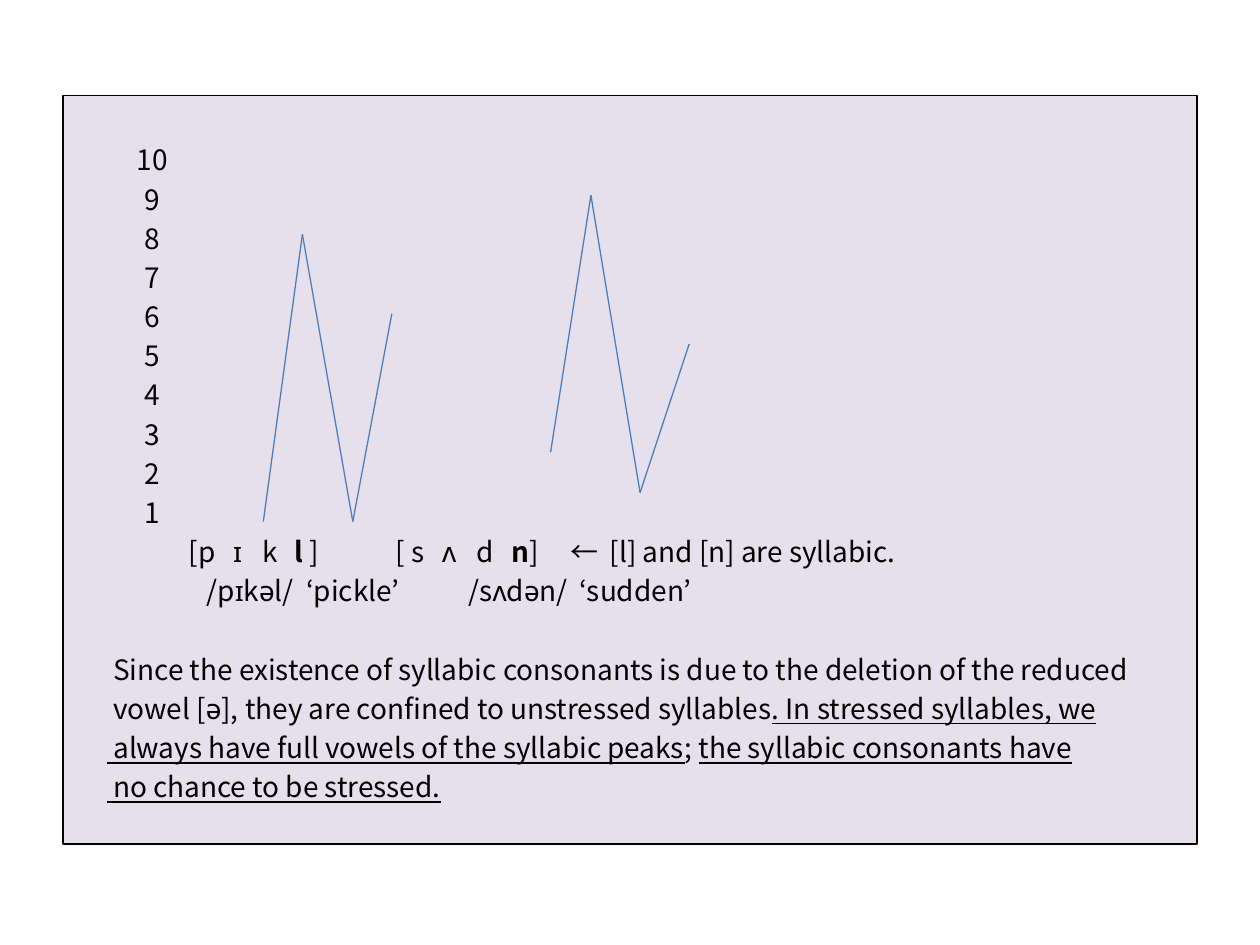
from dataclasses import dataclass
from itertools import pairwise

from lxml import etree
from pptx import Presentation
from pptx.dml.color import RGBColor
from pptx.enum.shapes import MSO_CONNECTOR, MSO_SHAPE
from pptx.enum.text import MSO_ANCHOR, PP_ALIGN
from pptx.oxml.ns import qn
from pptx.util import Inches, Pt

RECT = MSO_SHAPE.RECTANGLE
LINE = MSO_CONNECTOR.STRAIGHT
TOP = MSO_ANCHOR.TOP
LEFT = PP_ALIGN.LEFT


@dataclass(frozen=True)
class Theme:
    """Colours, font and sizes of the slide."""
    ink: RGBColor = RGBColor(0, 0, 0)
    panel: RGBColor = RGBColor(0xE6, 0xE0, 0xEC)
    curve: RGBColor = RGBColor(0x4B, 0x7E, 0xBC)
    font: str = "Noto Sans CJK KR"
    size: float = 16
    pitch: float = 22.4
    rule: float = 0.75


THEME = Theme()

SOUND_TABS = (0.65, 1.0, 1.23, 1.49, 2.29, 2.66, 2.93, 3.21, 3.68, 3.99)
SOUNDS = (
    ("\t[p\tɪ\tk\t", ""), ("l ", "b"), ("]\t[ s\tʌ\td\t", ""), ("n", "b"),
    ("]\t←\t[l] and [n] are syllabic.", ""),
)
WORD_TABS = (0.79, 1.58, 2.87, 3.75)
WORDS = (("\t/pɪkəl/\t‘pickle’\t/sʌdən/\t‘sudden’", ""),)
NOTES = (
    ((" Since the existence of syllabic consonants is due to the deletion of the reduced", ""),),
    ((" vowel [ə], they are confined to unstressed syllables", ""),
     (". In stressed syllables, we", "u")),
    ((" always have full vowels of the syllabic peaks", "u"), ("; ", ""),
     ("the syllabic consonants have", "u")),
    ((" no chance to be stressed.", "u"),),
)
PICKLE = ((2.09, 4.14), (2.4, 1.86), (2.8, 4.14), (3.11, 2.49))
SUDDEN = ((4.37, 3.59), (4.69, 1.55), (5.08, 3.91), (5.47, 2.73))


def add_tabs(para, stops, kind):
    """Give a paragraph its tab stops."""
    tabs = etree.SubElement(para._p.get_or_add_pPr(), qn("a:tabLst"))
    for stop in stops:
        etree.SubElement(tabs, qn("a:tab"), pos=str(Inches(stop)), algn=kind)


def write(frame, runs, tabs=(), kind="l", gap=0):
    """Add a paragraph of runs, each marked b for bold or u for underline."""
    first = frame.paragraphs[0]
    para = frame.add_paragraph() if first.runs else first
    if tabs:
        add_tabs(para, tabs, kind)
    para.alignment = LEFT
    para.line_spacing = Pt(THEME.pitch)
    para.space_before = Pt(gap)
    for text, mark in runs:
        run = para.add_run()
        run.text = text
        font = run.font
        font.name, font.size = THEME.font, Pt(THEME.size)
        font.color.rgb = THEME.ink
        font.bold, font.underline = mark == "b", mark == "u"


def add_panel(slide):
    """Draw the tinted panel and return its text frame."""
    panel = slide.shapes.add_shape(
        RECT, Inches(0.5), Inches(0.76), Inches(9), Inches(5.94))
    panel.shadow.inherit = False
    panel.fill.solid()
    panel.fill.fore_color.rgb = THEME.panel
    panel.line.color.rgb = THEME.ink
    panel.line.width = Pt(THEME.rule)
    frame = panel.text_frame
    frame.word_wrap = True
    frame.vertical_anchor = TOP
    frame.margin_left, frame.margin_top = Inches(0.35), Inches(0.33)
    frame.margin_right = frame.margin_bottom = Inches(0.1)
    return frame


def add_curve(slide, points):
    """Join the points of a sonority curve with straight lines."""
    for start, end in pairwise(points):
        line = slide.shapes.add_connector(LINE, *map(Inches, start + end))
        line.line.color.rgb = THEME.curve
        line.line.width = Pt(THEME.rule)
        etree.SubElement(line._element.spPr, qn("a:effectLst"))


def main():
    """Build and save the slide."""
    deck = Presentation()
    deck.slide_width, deck.slide_height = Inches(10), Inches(7.5)
    slide = deck.slides.add_slide(deck.slide_layouts[6])
    frame = add_panel(slide)
    for level in range(10, 0, -1):
        write(frame, ((f"\t{level}", ""),), tabs=(0.36,), kind="ctr")
    write(frame, SOUNDS, tabs=SOUND_TABS)
    write(frame, WORDS, tabs=WORD_TABS)
    for row, runs in enumerate(NOTES):
        write(frame, runs, gap=0 if row else THEME.pitch)
    for points in (PICKLE, SUDDEN):
        add_curve(slide, points)
    deck.save("out.pptx")


if __name__ == "__main__":
    main()
